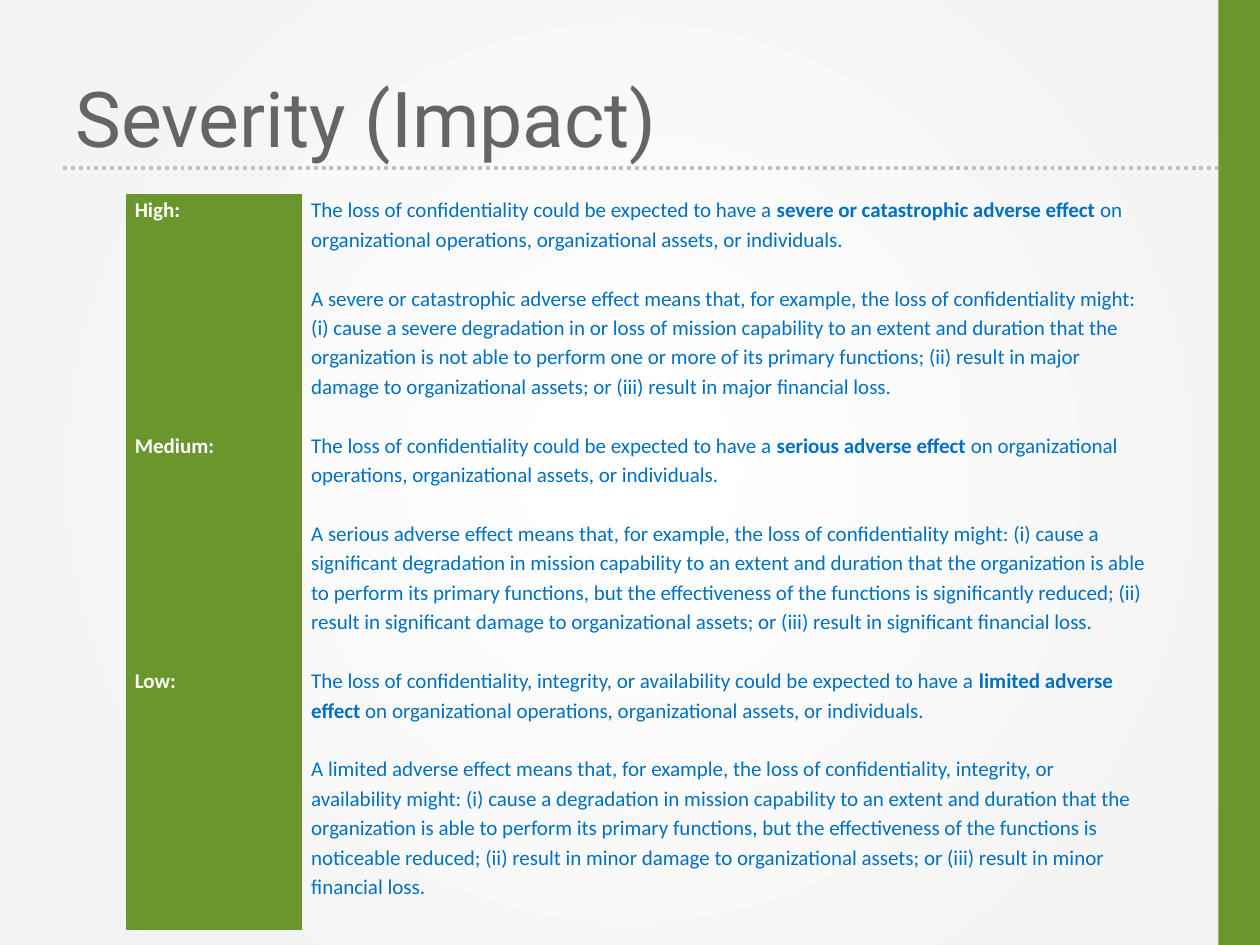
from dataclasses import dataclass

from lxml import etree
from pptx import Presentation
from pptx.dml.color import RGBColor
from pptx.enum.dml import MSO_LINE
from pptx.enum.shapes import MSO_CONNECTOR, MSO_SHAPE
from pptx.enum.text import MSO_ANCHOR, PP_ALIGN
from pptx.oxml import parse_xml
from pptx.oxml.ns import nsdecls, qn
from pptx.slide import Slide
from pptx.table import _Cell
from pptx.util import Inches, Pt

DOT = MSO_LINE.ROUND_DOT
STRAIGHT = MSO_CONNECTOR.STRAIGHT
RECT = MSO_SHAPE.RECTANGLE
TOP, MIDDLE = MSO_ANCHOR.TOP, MSO_ANCHOR.MIDDLE
LEFT = PP_ALIGN.LEFT
PLAIN_TABLE = "{2D5ABB26-0587-4C30-8999-92F81FD0307C}"

W, H = Inches(10), Inches(7.5)
MARGIN = int(W * 0.05)
BAR_LEFT = Inches(9.67)
RULE_TOP = Inches(1.33)
TABLE_LEFT, TABLE_TOP = int(W * 0.1), Inches(1.54)
LABEL_W, TEXT_W = Inches(1.4), Inches(6.77)
TEXT_LINE = Pt(16.82)


@dataclass(frozen=True)
class Theme:
    green: RGBColor = RGBColor.from_string("6A972D")
    blue: RGBColor = RGBColor.from_string("0070C0")
    gray: RGBColor = RGBColor.from_string("656565")
    rule: RGBColor = RGBColor.from_string("C1C1C1")
    white: RGBColor = RGBColor.from_string("FFFFFF")
    edge: RGBColor = RGBColor.from_string("F2F2F2")
    title_font: str = "Roboto"
    body_font: str = "Calibri"
    title_size: Pt = Pt(44)
    body_size: Pt = Pt(12)


@dataclass(frozen=True)
class Level:
    name: str
    loss: str
    effect: str
    meaning: str
    meaning_lines: int


THEME = Theme()
LOSS_LINES = 3
IMPACT = " on organizational operations, organizational assets, or individuals."
LEVELS = (
    Level(
        "High:",
        "The loss of confidentiality could be expected to have a ",
        "severe or catastrophic adverse effect",
        "A severe or catastrophic adverse effect means that, for example, the loss of "
        "confidentiality might: (i) cause a severe degradation in or loss of mission "
        "capability to an extent and duration that the organization is not able to perform "
        "one or more of its primary functions; (ii) result in major damage to "
        "organizational assets; or (iii) result in major financial loss.",
        5,
    ),
    Level(
        "Medium:",
        "The loss of confidentiality could be expected to have a ",
        "serious adverse effect",
        "A serious adverse effect means that, for example, the loss of confidentiality "
        "might: (i) cause a significant degradation in mission capability to an extent and "
        "duration that the organization is able to perform its primary functions, but the "
        "effectiveness of the functions is significantly reduced; (ii) result in "
        "significant damage to organizational assets; or (iii) result in significant "
        "financial loss.",
        5,
    ),
    Level(
        "Low:",
        "The loss of confidentiality, integrity, or availability could be expected to have a ",
        "limited adverse effect",
        "A limited adverse effect means that, for example, the loss of confidentiality, "
        "integrity, or availability might: (i) cause a degradation in mission capability to "
        "an extent and duration that the organization is able to perform its primary "
        "functions, but the effectiveness of the functions is noticeable reduced; (ii) "
        "result in minor damage to organizational assets; or (iii) result in minor "
        "financial loss.",
        6,
    ),
)


def set_background(s: Slide) -> None:
    fill = s.background.fill
    fill.gradient()
    for stop, color in zip(fill.gradient_stops, (THEME.white, THEME.edge)):
        stop.color.rgb = color
    grad = s.element.find(".//" + qn("a:gradFill"))
    grad.replace(
        grad.find(qn("a:lin")),
        parse_xml(
            f'<a:path {nsdecls("a")} path="circle">'
            '<a:fillToRect l="50000" t="50000" r="50000" b="50000"/></a:path>'
        ),
    )


def add_frame(s: Slide) -> None:
    rule = s.shapes.add_connector(STRAIGHT, MARGIN, RULE_TOP, BAR_LEFT, RULE_TOP)
    rule.line.color.rgb = THEME.rule
    rule.line.width = Pt(2.25)
    rule.line.dash_style = DOT
    etree.SubElement(rule.element.spPr, qn("a:effectLst"))
    bar = s.shapes.add_shape(RECT, BAR_LEFT, 0, W - BAR_LEFT, H)
    bar.shadow.inherit = False
    bar.fill.solid()
    bar.fill.fore_color.rgb = THEME.green
    bar.line.fill.background()


def set_title(s: Slide, text: str) -> None:
    sp = s.shapes.title
    sp.left, sp.top = MARGIN, int(H * 0.04)
    sp.width, sp.height = W - 2 * MARGIN, Inches(1.25)
    tf = sp.text_frame
    tf.text = text
    tf.vertical_anchor = MIDDLE
    p = tf.paragraphs[0]
    p.alignment = LEFT
    p.font.name = THEME.title_font
    p.font.size = THEME.title_size
    p.font.color.rgb = THEME.gray


def format_cell(cell: _Cell, color: RGBColor) -> None:
    cell.margin_left = cell.margin_right = Inches(0.07)
    cell.margin_top = cell.margin_bottom = 0
    cell.vertical_anchor = TOP
    p = cell.text_frame.paragraphs[0]
    p.line_spacing = 1.15
    p.font.name = THEME.body_font
    p.font.size = THEME.body_size
    p.font.color.rgb = color


def add_levels(s: Slide) -> None:
    lines = [n for level in LEVELS for n in (LOSS_LINES, level.meaning_lines)]
    frame = s.shapes.add_table(
        len(lines), 2, TABLE_LEFT, TABLE_TOP, LABEL_W + TEXT_W, sum(lines) * TEXT_LINE
    )
    table = frame.table
    table.first_row = table.horz_banding = False
    frame.element.find(".//" + qn("a:tableStyleId")).text = PLAIN_TABLE
    table.columns[0].width, table.columns[1].width = LABEL_W, TEXT_W
    for i, level in enumerate(LEVELS):
        table.cell(2 * i, 0).text = level.name
        p = table.cell(2 * i, 1).text_frame.paragraphs[0]
        for text, bold in ((level.loss, False), (level.effect, True), (IMPACT, False)):
            r = p.add_run()
            r.text = text
            r.font.bold = bold
        table.cell(2 * i + 1, 1).text = level.meaning
    for row, count in zip(table.rows, lines):
        row.height = count * TEXT_LINE
        label, body = row.cells
        format_cell(label, THEME.white)
        label.text_frame.paragraphs[0].font.bold = True
        label.fill.solid()
        label.fill.fore_color.rgb = THEME.green
        format_cell(body, THEME.blue)
        body.fill.background()


def main() -> None:
    prs = Presentation()
    prs.slide_width, prs.slide_height = W, H
    s = prs.slides.add_slide(prs.slide_layouts[5])
    set_background(s)
    add_frame(s)
    set_title(s, "Severity (Impact)")
    add_levels(s)
    prs.save("out.pptx")


if __name__ == "__main__":
    main()
